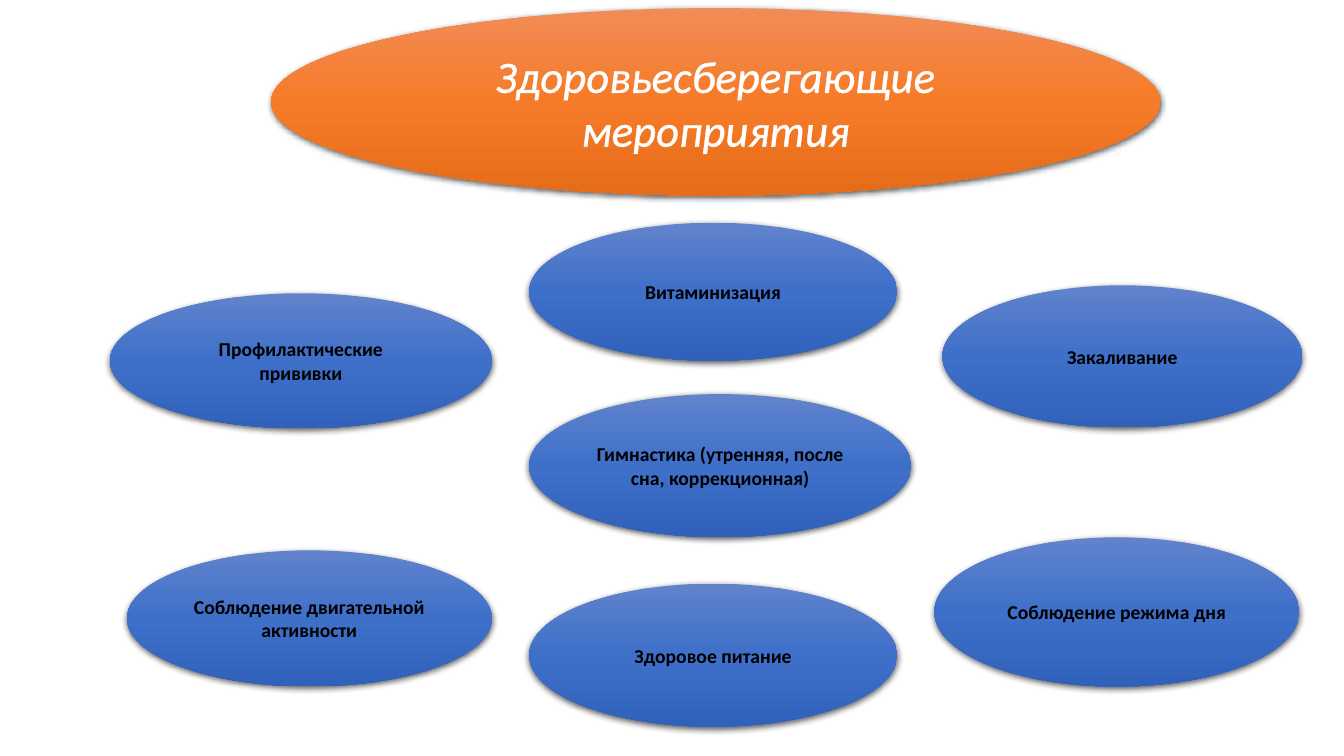
from copy import deepcopy

from lxml import etree
from pptx import Presentation
from pptx.dml.color import RGBColor
from pptx.enum.shapes import MSO_SHAPE
from pptx.enum.text import MSO_ANCHOR, PP_ALIGN
from pptx.oxml import parse_xml
from pptx.oxml.ns import nsdecls, qn
from pptx.util import Pt

ELLIPSE = MSO_SHAPE.OVAL
MIDDLE = MSO_ANCHOR.MIDDLE
CENTER = PP_ALIGN.CENTER

ORANGE = ("F18C57", "F67B28", "E56C19")
BLUE = ("6183CB", "3E70CA", "3062BB")
WHITE = "FFFFFF"
BLACK = "000000"

SHADOW_XML = (
    f'<a:outerShdw {nsdecls("a")} blurRad="{Pt(4.5)}" dist="{Pt(1.5)}" dir="5400000" '
    f'algn="ctr" rotWithShape="0"><a:srgbClr val="{BLACK}"><a:alpha val="63000"/>'
    '</a:srgbClr></a:outerShdw>'
)


def rgb(value):
    return RGBColor.from_string(value)


def add_ellipse(box, text, shades, size, color):
    """Add a shaded ellipse with centred text and return its text run."""
    ellipse = slide.shapes.add_shape(ELLIPSE, *[Pt(length) for length in box])
    ellipse.line.fill.background()

    fill = ellipse.fill
    fill.gradient()
    fill.gradient_angle = 270
    properties = ellipse._element.spPr
    stop_list = properties.find(".//" + qn("a:gsLst"))
    stop_list.append(deepcopy(stop_list[0]))
    for stop, shade, position in zip(fill.gradient_stops, shades, (0, 0.5, 1)):
        stop.color.rgb = rgb(shade)
        stop.position = position

    ellipse.shadow.inherit = False
    properties.find(qn("a:effectLst")).append(parse_xml(SHADOW_XML))

    frame = ellipse.text_frame
    frame.word_wrap = True
    frame.vertical_anchor = MIDDLE
    paragraph = frame.paragraphs[0]
    paragraph.alignment = CENTER
    run = paragraph.add_run()
    run.text = text
    run.font.name = "Calibri"
    run.font.size = Pt(size)
    run.font.color.rgb = rgb(color)
    return run


prs = Presentation()
prs.slide_width, prs.slide_height = Pt(960), Pt(540)
slide = prs.slides.add_slide(prs.slide_layouts[6])

# Title
title = add_ellipse((193.7, 5.8, 635, 133.9), "Здоровьесберегающие мероприятия",
                    ORANGE, 32, WHITE)
title.font.italic = True
outline = etree.Element(qn("a:ln"), w=str(Pt(1.45)))
outline_fill = etree.SubElement(outline, qn("a:solidFill"))
etree.SubElement(outline_fill, qn("a:srgbClr"), val=WHITE)
title.font._element.insert(0, outline) if hasattr(title.font, "_element") else \
    title._r.get_or_add_rPr().insert(0, outline)

# Health measures
middle_left = 378
measures = [
    ("Профилактические прививки", (78.5, 209.5, 272.9, 96.5)),
    ("Соблюдение двигательной активности", (90.7, 393.1, 260.6, 97.2)),
    ("Витаминизация", (middle_left, 159.1, 262.8, 98.6)),
    ("Здоровое питание", (middle_left, 416.9, 262.8, 102.2)),
    ("Соблюдение режима дня", (667.4, 383.8, 260.6, 106.6)),
    ("Закаливание", (673.2, 203.8, 257, 101.5)),
    ("Гимнастика (утренняя, после сна, коррекционная)", (middle_left, 281.5, 272.9, 102.2)),
]
for measure, box in measures:
    add_ellipse(box, measure, BLUE, 14, BLACK).font.bold = True

prs.save("out.pptx")
